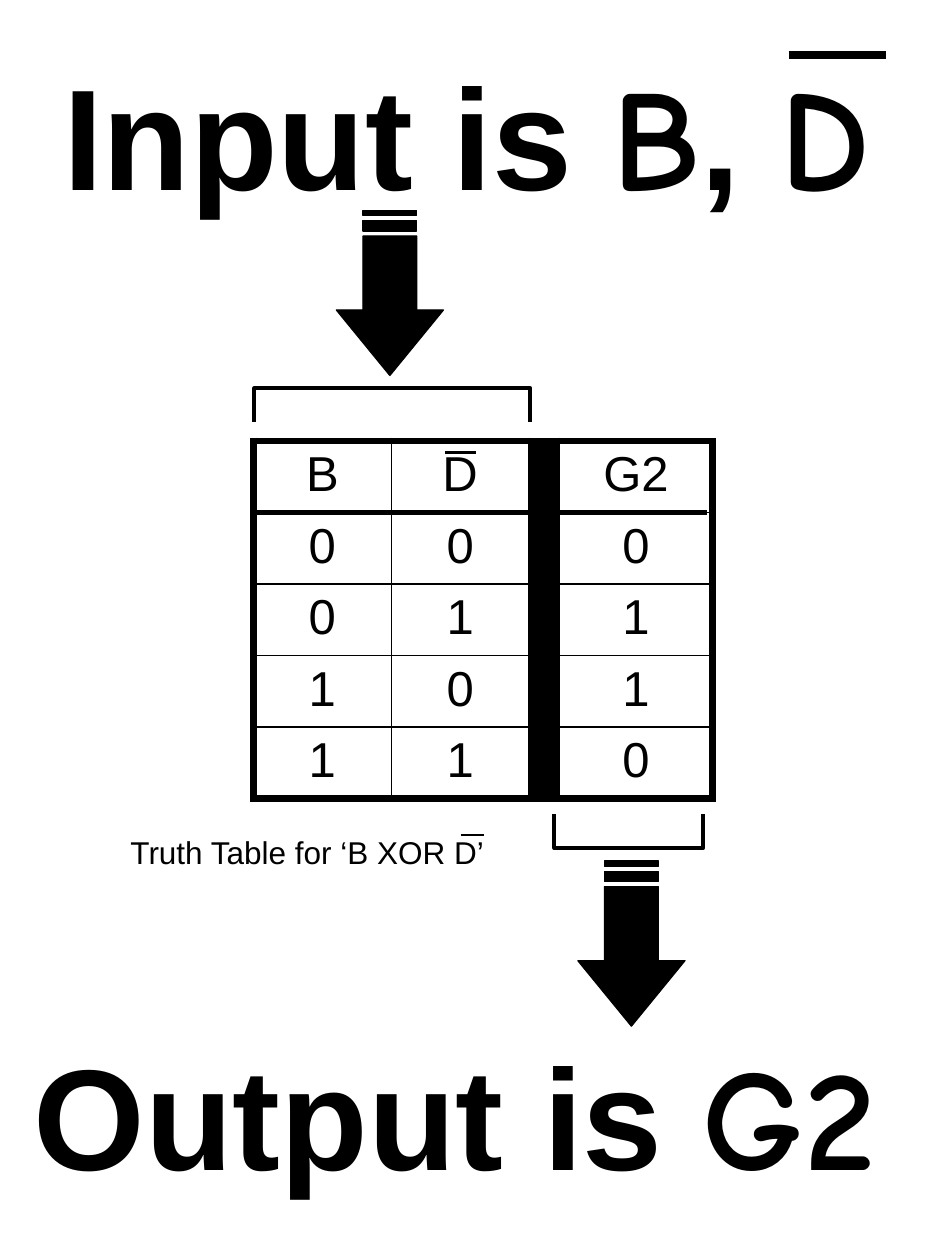
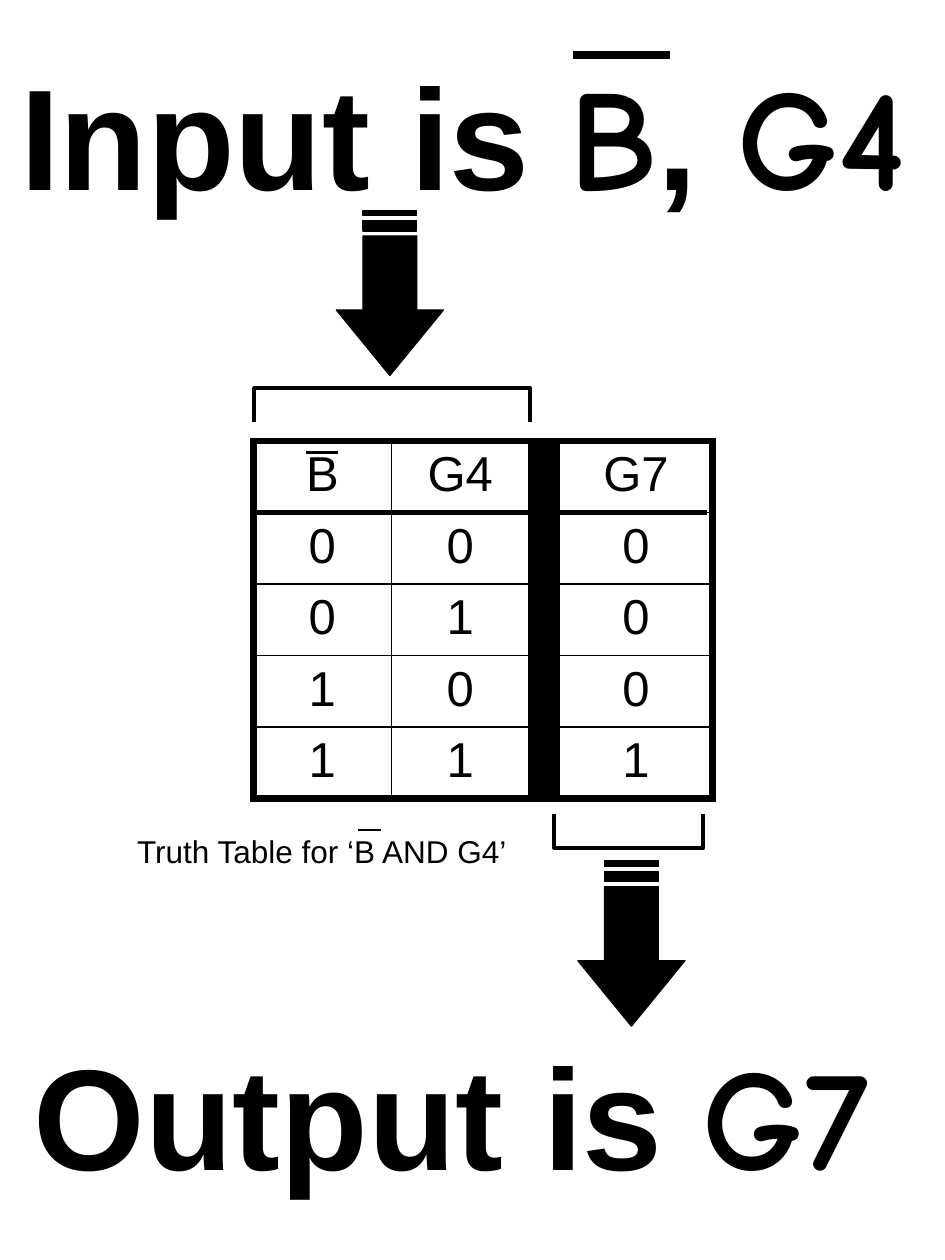
from pptx import Presentation
from pptx.dml.color import RGBColor
from pptx.enum.shapes import MSO_CONNECTOR
from pptx.enum.text import MSO_ANCHOR, MSO_AUTO_SIZE, PP_ALIGN
from pptx.oxml import parse_xml
from pptx.oxml.ns import nsdecls
from pptx.util import Pt

BLACK = RGBColor(0, 0, 0)
SANS = "Arial"
COMIC = "Comic Neue"

COLS = [79, 78.5, 16.5, 88]
ROW = 40.75
GAP = 2  # the black column between inputs and output
INPUTS = [(0, 0), (0, 1), (1, 0), (1, 1)]

# centre and top of each arrow
ARROWS = [(222.8, 120.2), (360.8, 492)]
# half width of shaft and head, then heights below the top
SHAFT, HEAD = 15.4, 30.6
STRIPES = [(0, 3), (6, 11.8)]
BODY, NECK, TIP = 14.7, 57, 94.4
# left, right, open end and closed end of each bracket
BRACKETS = [(145.4, 303.1, 241.2, 221.8), (316.8, 401.8, 465.1, 484.6)]

# "bars" are overlines: from x, to x, y, weight
SLIDES = [
    dict(
        title=[("Input is ", SANS), ("B", COMIC), (", ", SANS), ("D", COMIC)],
        place=(28.8, 485.3),
        heads=["B", "D", "G2"],
        outs=[0, 1, 1, 0],
        note="Truth Table for ‘B XOR D’",
        spot=(67.5, 472.6, 219.8),
        bars=[(450.7, 506.2, 31.5, 4.5), (254.2, 272.2, 258.5, 1.5),
              (263.3, 276.7, 477.2, 1.5)],
    ),
    dict(
        title=[("Input is ", SANS), ("B", COMIC), (", ", SANS), ("G4", COMIC)],
        place=(4.3, 532.1),
        heads=["B", "G4", "G7"],
        outs=[0, 0, 0, 1],
        note="Truth Table for ‘B AND G4’",
        spot=(71.3, 471.6, 229.7),
        bars=[(327.6, 383, 31.5, 4.5), (175, 193, 258.5, 1.5),
              (204.7, 218, 474.2, 1.5)],
    ),
]


def write(shape, place, parts, size, bold):
    """Place a text shape and fill it with (text, font) parts on one line."""
    shape.left, shape.top, shape.width, shape.height = map(Pt, place)
    frame = shape.text_frame
    frame.word_wrap = False
    frame.auto_size = MSO_AUTO_SIZE.SHAPE_TO_FIT_TEXT
    frame.vertical_anchor = MSO_ANCHOR.TOP
    line = frame.paragraphs[0]
    line.alignment = PP_ALIGN.LEFT
    for text, face in parts:
        run = line.add_run()
        run.text = text
        run.font.name = face
        run.font.size = Pt(size)
        run.font.bold = bold
        run.font.color.rgb = BLACK


def outline(shapes, paths, closed, weight):
    """Draw paths as one freeform, filled when closed."""
    first = paths[0][0]
    pen = shapes.build_freeform(Pt(first[0]), Pt(first[1]))
    for index, path in enumerate(paths):
        points = [(Pt(x), Pt(y)) for x, y in path]
        if index:
            pen.move_to(*points[0])
        pen.add_line_segments(points[1:], close=closed)
    shape = pen.convert_to_shape()
    shape.shadow.inherit = False
    shape.line.color.rgb = BLACK
    shape.line.width = Pt(weight)
    if closed:
        shape.fill.solid()
        shape.fill.fore_color.rgb = BLACK
    else:
        shape.fill.background()


deck = Presentation()
deck.slide_width, deck.slide_height = Pt(540), Pt(720)

for data in SLIDES:
    slide = deck.slides.add_slide(deck.slide_layouts[5])
    shapes = slide.shapes

    # Headings and caption
    left, width = data["place"]
    write(shapes.title, (left, 23, width, 105.8), data["title"], 82, True)
    box = shapes.add_textbox(0, 0, 0, 0)
    result = [("Output is ", SANS), (data["heads"][-1], COMIC)]
    write(box, (12.2, 583.2, 502.6, 105.8), result, 82, True)
    left, top, width = data["spot"]
    box = shapes.add_textbox(0, 0, 0, 0)
    write(box, (left, top, width, 29), [(data["note"], SANS)], 18, False)

    # Truth table
    rows = [data["heads"]]
    rows += [[*pair, out] for pair, out in zip(INPUTS, data["outs"])]
    last, end = len(rows) - 1, len(COLS) - 1
    table = shapes.add_table(len(rows), len(COLS), Pt(144.7), Pt(252),
                             Pt(sum(COLS)), Pt(ROW * len(rows))).table
    table.first_row = table.horz_banding = False
    for col, width in zip(table.columns, COLS):
        col.width = Pt(width)
    for r, values in enumerate(rows):
        table.rows[r].height = Pt(ROW)
        texts = [*values[:GAP], "", *values[GAP:]]
        for c, text in enumerate(texts):
            cell = table.cell(r, c)
            edges = [("L", c == 0), ("R", c == end),
                     ("T", r == 0), ("B", r == last)]
            for side, outer in edges:
                weight = Pt(4.5 if outer else 1)
                cell._tc.get_or_add_tcPr().append(parse_xml(
                    f'<a:ln{side} {nsdecls("a")} w="{weight}"><a:solidFill>'
                    f'<a:srgbClr val="{BLACK}"/></a:solidFill></a:ln{side}>'))
            if c == GAP:
                cell.fill.solid()
                cell.fill.fore_color.rgb = BLACK
                continue
            cell.fill.background()
            cell.text = str(text)
            line = cell.text_frame.paragraphs[0]
            line.alignment = PP_ALIGN.CENTER
            line.font.name = SANS
            line.font.size = Pt(28)
            line.font.color.rgb = BLACK

    # Overlines and the rule under the table head
    for start, stop, y, weight in [*data["bars"], (144.7, 403.9, 293, 3)]:
        bar = shapes.add_connector(MSO_CONNECTOR.STRAIGHT,
                                   Pt(start), Pt(y), Pt(stop), Pt(y))
        bar.line.color.rgb = BLACK
        bar.line.width = Pt(weight)
        bar._element.spPr.append(parse_xml(f'<a:effectLst {nsdecls("a")}/>'))

    # Striped arrows and brackets
    for x, y in ARROWS:
        near, far = x - SHAFT, x + SHAFT
        body = [(far, y + BODY), (far, y + NECK), (x + HEAD, y + NECK),
                (x, y + TIP), (x - HEAD, y + NECK), (near, y + NECK),
                (near, y + BODY)]
        bands = [[(near, y + a), (far, y + a), (far, y + b), (near, y + b)]
                 for a, b in STRIPES]
        outline(shapes, [body, *bands], True, 0.75)
    for near, far, tips, base in BRACKETS:
        path = [(near, tips), (near, base), (far, base), (far, tips)]
        outline(shapes, [path], False, 2.25)

deck.save("out.pptx")
